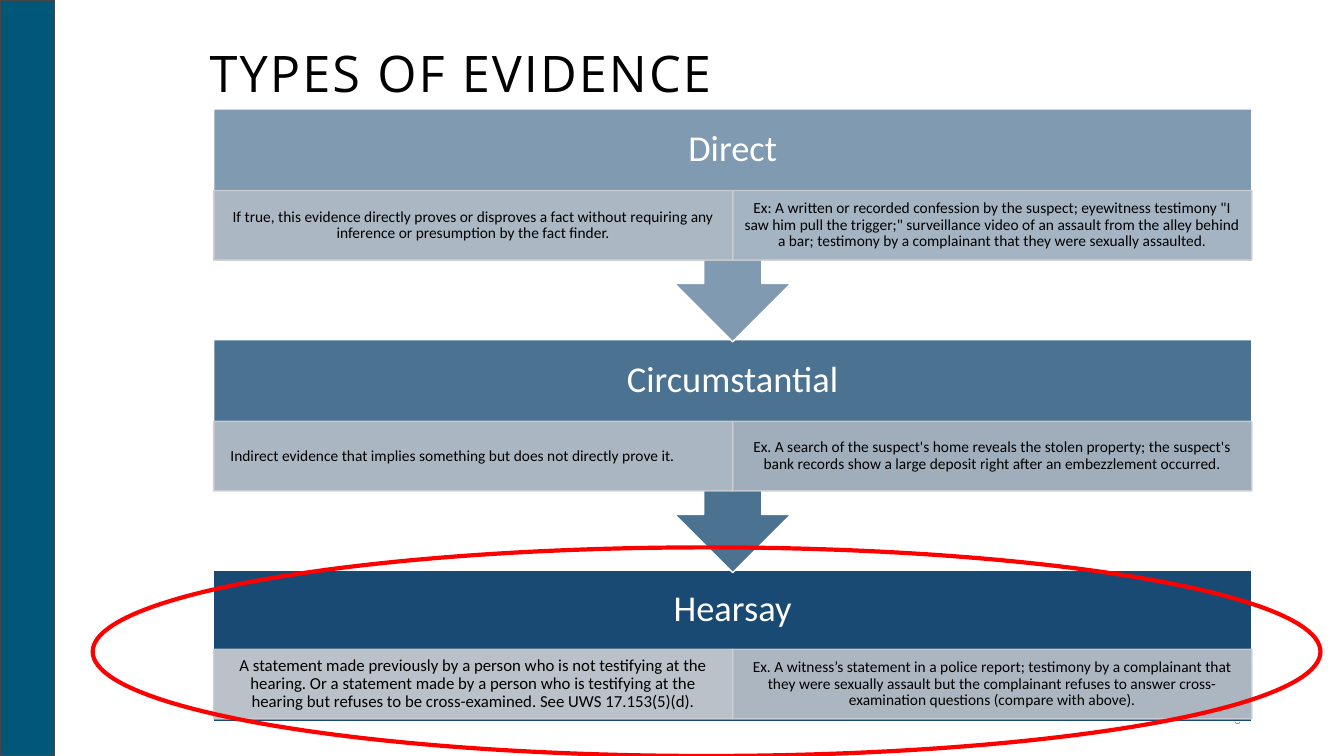
from dataclasses import dataclass

from lxml.etree import SubElement
from pptx import Presentation
from pptx.dml.color import RGBColor
from pptx.enum.shapes import MSO_SHAPE
from pptx.enum.text import MSO_ANCHOR, PP_ALIGN
from pptx.oxml.ns import qn
from pptx.util import Pt

TEAL = RGBColor(0x00, 0x57, 0x77)
DARK_GRAY = RGBColor(0x46, 0x46, 0x46)
MID_GRAY = RGBColor(0x8C, 0x8C, 0x8C)
NAVY = RGBColor(0x00, 0x37, 0x64)
SILVER = RGBColor(0xCC, 0xCE, 0xD3)
RED = RGBColor(0xFF, 0x00, 0x00)
WHITE = RGBColor(0xFF, 0xFF, 0xFF)
BLACK = RGBColor(0x00, 0x00, 0x00)

SLIDE_WIDTH, SLIDE_HEIGHT = 960, 540
FLOW_LEFT, FLOW_TOP, FLOW_WIDTH = 152.6, 77.8, 741.6
STAGE_PITCH = 164.9
CALLOUT_HEIGHT, LAST_HEIGHT = 166.3, 108
CELL_HEIGHT = 49.7


@dataclass
class Cell:
    text: str
    opacity: int
    size: int = 11
    align: PP_ALIGN = PP_ALIGN.CENTER
    inset: float = 6.5


@dataclass
class Stage:
    name: str
    opacity: int
    cells: tuple
    label_height: float = 58.3
    is_last: bool = False


STAGES = [
    Stage("Direct", 50, (
        Cell("If true, this evidence directly proves or disproves a fact without "
             "requiring any inference or presumption by the fact finder.", 58),
        Cell("Ex: A written or recorded confession by the suspect; eyewitness "
             "testimony \"I saw him pull the trigger;\" surveillance video of an "
             "assault from the alley behind a bar; testimony by a complainant "
             "that they were sexually assaulted.", 50))),
    Stage("Circumstantial", 70, (
        Cell("Indirect evidence that implies something but does not directly "
             "prove it.", 74, align=PP_ALIGN.LEFT, inset=12),
        Cell("Ex. A search of the suspect's home reveals the stolen property; the "
             "suspect's bank records show a large deposit right after an "
             "embezzlement occurred.", 66))),
    Stage("Hearsay", 90, (
        Cell("A statement made previously by a person who is not testifying at the "
             "hearing. Or a statement made by a person who is testifying at the "
             "hearing but refuses to be cross-examined. See UWS 17.153(5)(d).",
             90, size=12),
        Cell("Ex. A witness’s statement in a police report; testimony by a "
             "complainant that they were sexually assault but the complainant "
             "refuses to answer cross-examination questions (compare with above).",
             82)), label_height=56.2, is_last=True),
]


def set_opacity(fill, percent):
    """Make a solid fill (of a shape or a line) partly transparent."""
    color = fill._xPr.find(qn("a:solidFill"))[0]
    SubElement(color, qn("a:alpha")).set("val", str(percent * 1000))


def add_box(slide, kind, box, line_color, line_width, fill_color=None, opacity=100):
    shape = slide.shapes.add_shape(kind, *map(Pt, box))
    shape.shadow.inherit = False
    shape.line.color.rgb = line_color
    shape.line.width = Pt(line_width)
    if fill_color is None:
        shape.fill.background()
    else:
        shape.fill.solid()
        shape.fill.fore_color.rgb = fill_color
        if opacity < 100:
            set_opacity(shape.fill, opacity)
    return shape


def write(shape, text, font_name, size, color, align, margins, anchor=MSO_ANCHOR.MIDDLE):
    """Fill a shape with one paragraph; margins are left, top, right, bottom."""
    frame = shape.text_frame
    frame.text = text
    frame.word_wrap = True
    frame.vertical_anchor = anchor
    (frame.margin_left, frame.margin_top,
     frame.margin_right, frame.margin_bottom) = map(Pt, margins)
    paragraph = frame.paragraphs[0]
    paragraph.alignment = align
    paragraph.line_spacing = 0.9
    font = paragraph.runs[0].font
    font.name, font.size, font.color.rgb = font_name, Pt(size), color
    return font


def add_title(slide, box):
    title = slide.shapes.title
    title.left, title.top, title.width, title.height = map(Pt, box)
    font = write(title, "TYPES OF EVIDENCE", "Open Sans", 36, BLACK, PP_ALIGN.LEFT,
                 (7.2, 3.6, 7.2, 3.6), MSO_ANCHOR.BOTTOM)
    font._rPr.set("spc", "150")


def add_page_number(slide, box):
    number = slide.shapes.add_textbox(*map(Pt, box))
    write(number, "6", "Open Sans", 9, MID_GRAY, PP_ALIGN.RIGHT, (7.2, 3.6, 7.2, 3.6))


def add_stage(slide, stage, box):
    left, top, width, height = box
    # Heading block, with an arrow down to the next stage
    kind = MSO_SHAPE.RECTANGLE if stage.is_last else MSO_SHAPE.DOWN_ARROW_CALLOUT
    block = add_box(slide, kind, box, WHITE, 1, NAVY, stage.opacity)
    write(block, stage.name, "Calibri", 26, WHITE, PP_ALIGN.CENTER,
          (14, 14, 14, LAST_HEIGHT - stage.label_height + 14))
    # Definition and example side by side under the heading
    cell_width = width / len(stage.cells)
    for column, cell in enumerate(stage.cells):
        cell_box = (left + column * cell_width, top + stage.label_height,
                    cell_width, CELL_HEIGHT)
        shape = add_box(slide, MSO_SHAPE.RECTANGLE, cell_box, SILVER, 1,
                        SILVER, cell.opacity)
        set_opacity(shape.line.fill, 90)
        write(shape, cell.text, "Calibri", cell.size, BLACK, cell.align,
              (cell.inset, 1.4, 6.5, 1.4))


def add_flow(slide, left, top, width):
    # Bottom stage first, so that each arrow tip lies over the next stage
    for index, stage in reversed(list(enumerate(STAGES))):
        height = LAST_HEIGHT if stage.is_last else CALLOUT_HEIGHT
        add_stage(slide, stage, (left, top + index * STAGE_PITCH, width, height))


def main():
    presentation = Presentation()
    presentation.slide_width = Pt(SLIDE_WIDTH)
    presentation.slide_height = Pt(SLIDE_HEIGHT)
    slide = presentation.slides.add_slide(presentation.slide_layouts[5])

    # Side band, title and page number
    add_box(slide, MSO_SHAPE.RECTANGLE, (0, 0, 39, SLIDE_HEIGHT), DARK_GRAY, 1, TEAL)
    add_title(slide, (142.6, 0, 684.7, 77.8))
    add_page_number(slide, (760.3, 500.4, 133.2, 28.8))

    # Types of evidence, with the hearsay stage circled
    add_flow(slide, FLOW_LEFT, FLOW_TOP, FLOW_WIDTH)
    add_box(slide, MSO_SHAPE.OVAL, (66.2, 391, 877, 149), RED, 3)

    presentation.save("out.pptx")


if __name__ == "__main__":
    main()
